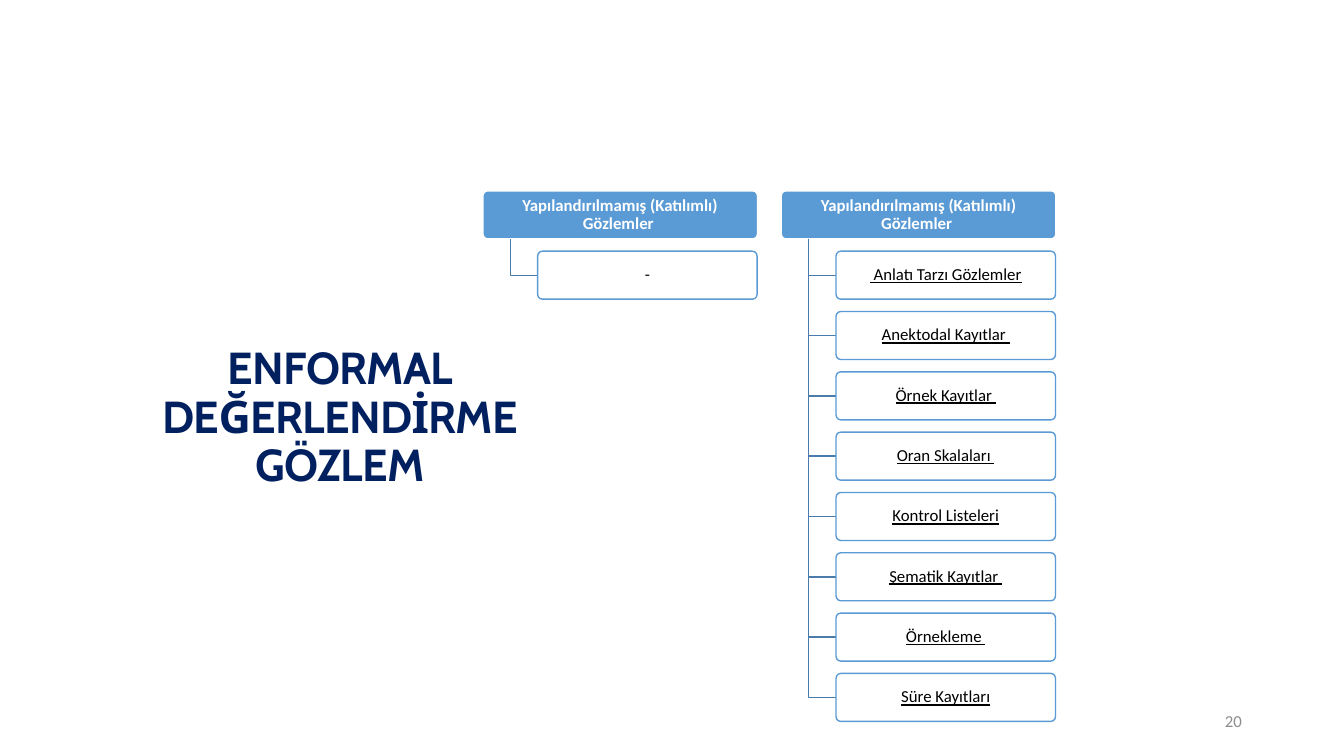
import pptx
import pptx.dml.color
import pptx.enum.shapes
import pptx.enum.text
import pptx.oxml
import pptx.oxml.ns
import pptx.util

Cm = pptx.util.Cm
Pt = pptx.util.Pt
ALIGN = pptx.enum.text.PP_ALIGN

TITLE_LINES = ["ENFORMAL DEĞERLENDİRME", "GÖZLEM"]
PAGE_NUMBER = "20"
BRANCHES = [
    {"heading": "Yapılandırılmamış (Katılımlı) Gözlemler ",
     "children": ["-"], "child_style": "plain"},
    {"heading": "Yapılandırılmamış (Katılımlı) Gözlemler ",
     "children": [" Anlatı Tarzı Gözlemler", "Anektodal Kayıtlar ", "Örnek Kayıtlar ",
                  "Oran Skalaları ", "Kontrol Listeleri", "Şematik Kayıtlar ",
                  "Örnekleme ", "Süre Kayıtları"],
     "child_style": "link"},
]

THEME = {
    "blue": "5B9BD5",
    "white": "FFFFFF",
    "connector": "497CAB",
    "line": Pt(1),
    "title": {"name": "Cabin", "size": Pt(32), "bold": True, "color": "002060"},
    "number": {"name": "Calibri", "size": Pt(12), "color": "8C8C8C"},
    "heading": {"name": "Calibri", "size": Pt(12), "bold": True, "color": "FFFFFF"},
    "plain": {"name": "Calibri", "size": Pt(12), "color": "000000"},
    "link": {"name": "Calibri", "size": Pt(12), "underline": True, "color": "000000"},
}

TREE_LEFT, TREE_TOP = Cm(12.17), Cm(4.81)
COLUMN_STEP, ROW_STEP = Cm(7.52), Cm(1.52)
HEADING_WIDTH, CHILD_WIDTH, BOX_HEIGHT = Cm(6.92), Cm(5.53), Cm(1.21)
TRUNK_INDENT, CHILD_INDENT = Cm(0.69), Cm(1.38)
BOX_MARGINS = {"margin_left": Cm(0.11), "margin_right": Cm(0.11),
               "margin_top": Cm(0.09), "margin_bottom": Cm(0.09)}


def rgb(code):
    return pptx.dml.color.RGBColor.from_string(code)


def write(shape, lines, style, alignment=ALIGN.CENTER, spacing=0.9, margins=None):
    """Fill a shape with one paragraph, its lines parted by line breaks."""
    frame = shape.text_frame
    frame_format = {"word_wrap": True,
                    "vertical_anchor": pptx.enum.text.MSO_ANCHOR.MIDDLE, **(margins or {})}
    for name, value in frame_format.items():
        setattr(frame, name, value)
    paragraph = frame.paragraphs[0]
    paragraph.alignment = alignment
    paragraph.line_spacing = spacing
    for index, line in enumerate(lines):
        if index:
            paragraph.add_line_break()
        run = paragraph.add_run()
        run.text = line
        for name, value in THEME[style].items():
            if name == "color":
                run.font.color.rgb = rgb(value)
            else:
                setattr(run.font, name, value)
    return paragraph


def add_box(slide, left, top, width, text, style, fill, line):
    box = slide.shapes.add_shape(pptx.enum.shapes.MSO_SHAPE.ROUNDED_RECTANGLE,
                                 left, top, width, BOX_HEIGHT)
    box.adjustments[0] = 0.1
    box.shadow.inherit = False
    box.fill.solid()
    box.fill.fore_color.rgb = rgb(fill)
    box.line.color.rgb = rgb(line)
    box.line.width = THEME["line"]
    write(box, [text], style, margins=BOX_MARGINS)
    return box


def add_elbow(slide, left, top, right, bottom):
    """Draw a line down from the heading and across to a child."""
    builder = slide.shapes.build_freeform(left, top)
    builder.add_line_segments([(left, bottom), (right, bottom)], close=False)
    elbow = builder.convert_to_shape()
    elbow.shadow.inherit = False
    elbow.fill.background()
    elbow.line.color.rgb = rgb(THEME["connector"])
    elbow.line.width = THEME["line"]


def add_branch(slide, left, branch):
    add_box(slide, left, TREE_TOP, HEADING_WIDTH, branch["heading"], "heading",
            THEME["blue"], THEME["white"])
    child_left = left + CHILD_INDENT
    for row, text in enumerate(branch["children"], start=1):
        top = TREE_TOP + row * ROW_STEP
        add_elbow(slide, left + TRUNK_INDENT, TREE_TOP + BOX_HEIGHT,
                  child_left, top + BOX_HEIGHT // 2)
        child = add_box(slide, child_left, top, CHILD_WIDTH, text, branch["child_style"],
                        THEME["white"], THEME["blue"])
        color = child.fill._xPr.find(".//" + pptx.oxml.ns.qn("a:srgbClr"))
        alpha = pptx.oxml.parse_xml(f'<a:alpha {pptx.oxml.ns.nsdecls("a")} val="90000"/>')
        color.append(alpha)


def main():
    presentation = pptx.Presentation()
    presentation.slide_width, presentation.slide_height = Cm(33.87), Cm(19.05)
    slide = presentation.slides.add_slide(presentation.slide_layouts[6])

    title = slide.shapes.add_textbox(Cm(2.97), Cm(8.69), Cm(11.2), Cm(3.73))
    paragraph = write(title, TITLE_LINES, "title")
    for run in paragraph.runs:
        run.font._element.set("spc", "-50")

    number = slide.shapes.add_textbox(Cm(23.93), Cm(17.65), Cm(7.62), Cm(1.02))
    write(number, [PAGE_NUMBER], "number", ALIGN.RIGHT, 1.0)

    for column, branch in enumerate(BRANCHES):
        add_branch(slide, TREE_LEFT + column * COLUMN_STEP, branch)

    presentation.save("out.pptx")


if __name__ == "__main__":
    main()
